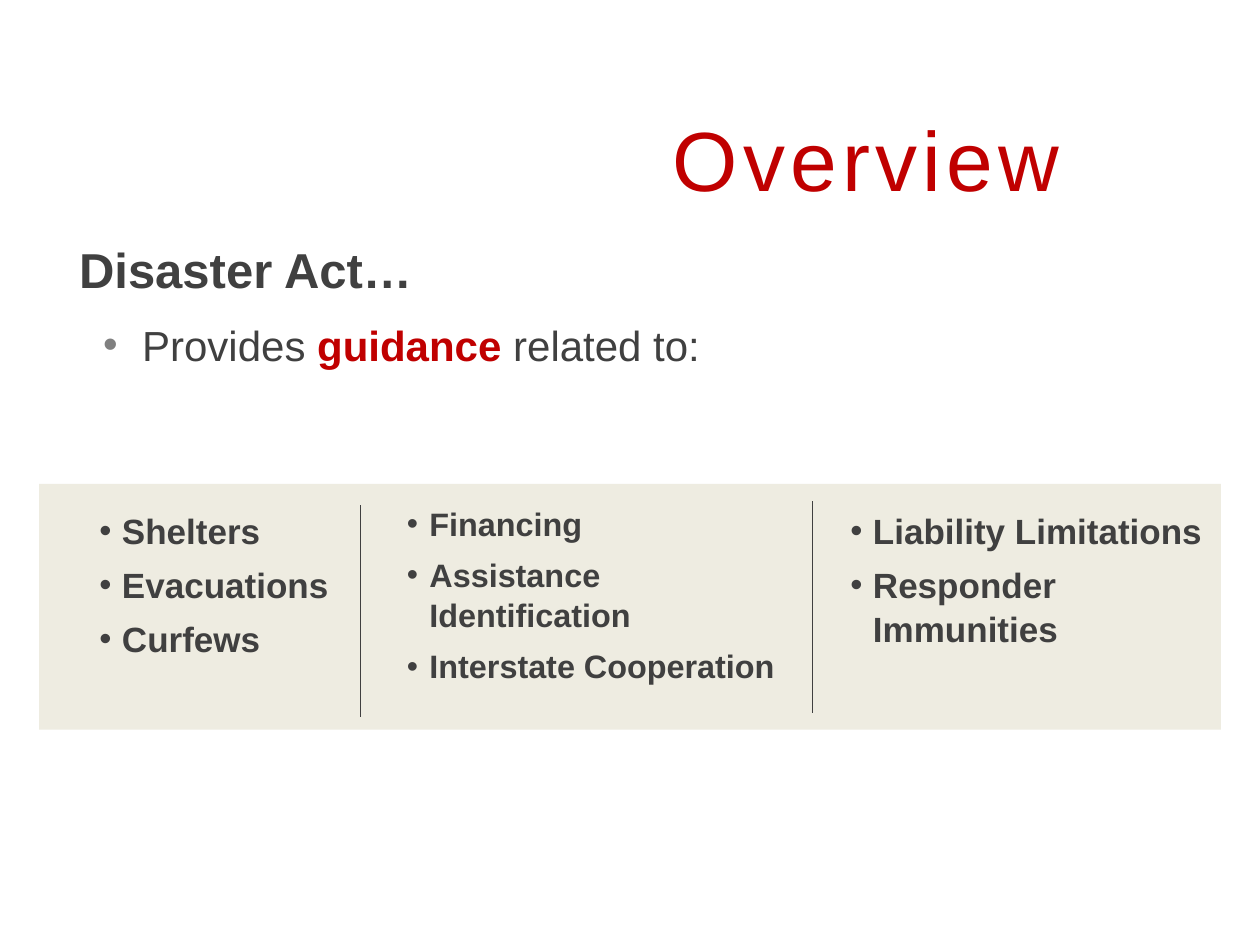
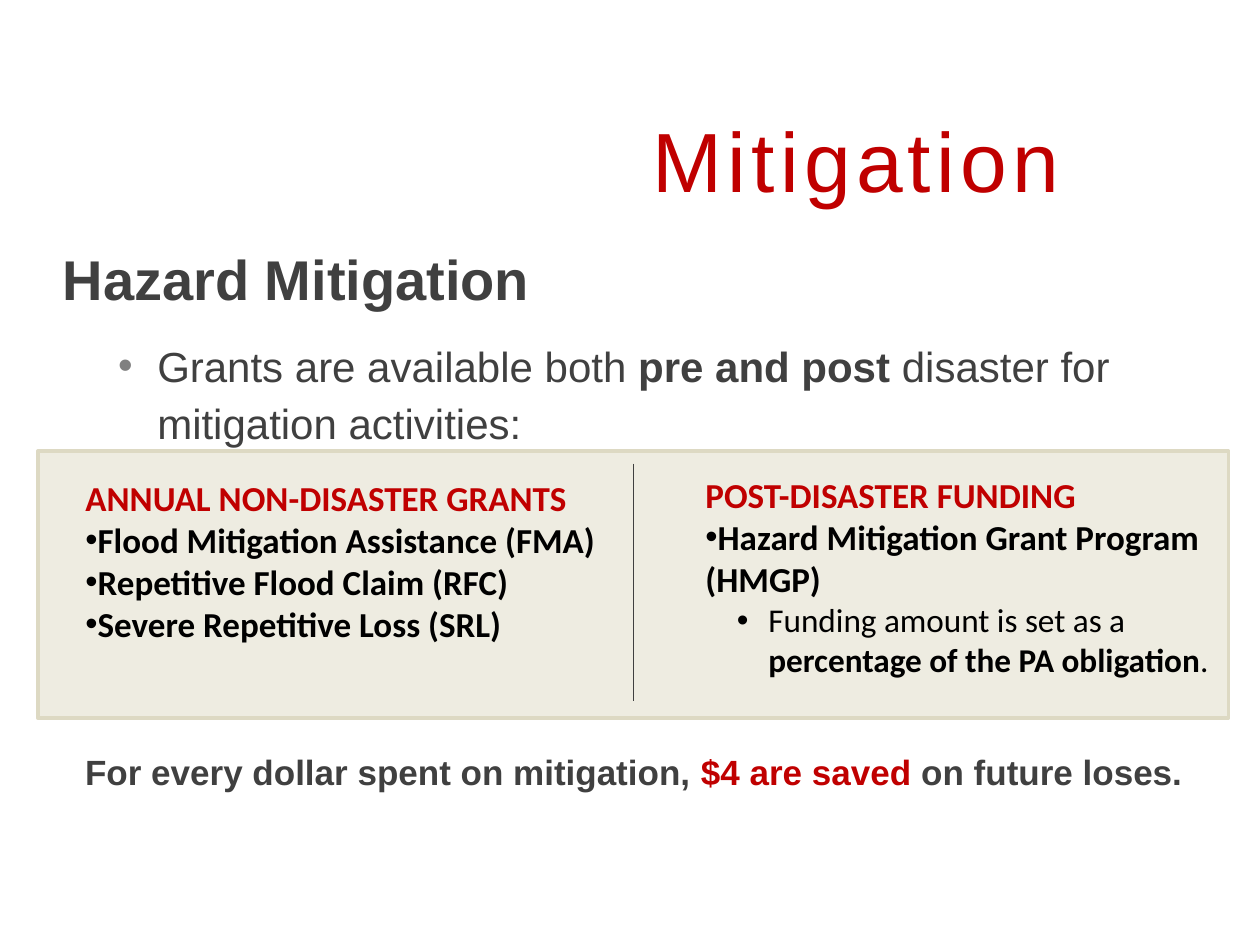
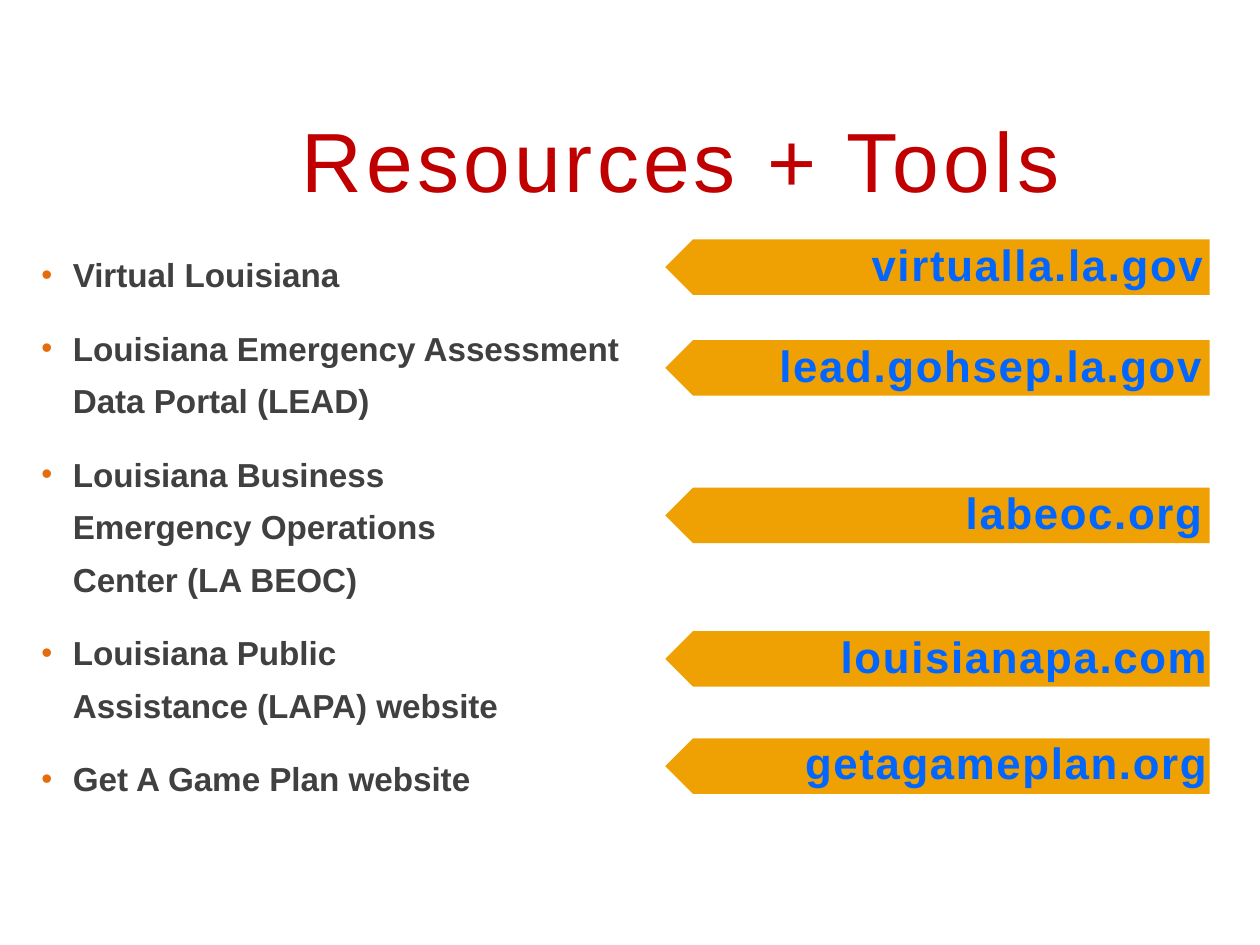
"""Builds three slides on disaster law, mitigation grants and online resources."""
from dataclasses import dataclass
from typing import Optional

from lxml.etree import SubElement
from pptx import Presentation
from pptx.dml.color import RGBColor
from pptx.enum.shapes import MSO_CONNECTOR as Connector, MSO_SHAPE as Shape
from pptx.enum.text import MSO_ANCHOR as Anchor, MSO_AUTO_SIZE as AutoSize, PP_ALIGN as Align
from pptx.oxml.ns import qn
from pptx.util import Inches, Pt

RED = RGBColor(0xC0, 0x00, 0x00)
CHARCOAL = RGBColor(0x40, 0x40, 0x40)
GRAY = RGBColor(0x80, 0x80, 0x80)
BLACK = RGBColor(0x00, 0x00, 0x00)
BEIGE = RGBColor(0xEE, 0xEC, 0xE1)
TAN = RGBColor(0xDD, 0xD9, 0xC3)
ORANGE = RGBColor(0xE4, 0x6C, 0x0A)
AMBER = RGBColor(0xEF, 0xA0, 0x03)
LINK_BLUE = RGBColor(0x00, 0x66, 0xFF)


@dataclass
class Style:
    """Look of a paragraph; lengths in inches, spacing in points or lines."""
    size: float
    color: RGBColor = CHARCOAL
    bold: bool = True
    font: str = "Arial"
    align: Align = Align.LEFT
    left: float = 0
    hang: float = 0
    before: float = 0
    line: Optional[object] = None
    bullet: bool = False
    bullet_color: Optional[RGBColor] = None
    bullet_size: int = 100
    tracking: float = 0
    level: int = 0


TITLE = Style(48, RED, False, align=Align.RIGHT, tracking=3)
TITLE_TIGHT = Style(48, RED, False, align=Align.RIGHT, tracking=2.4)
ACT_HEADING = Style(28, left=0.25, line=Pt(30))
ACT_POINT = Style(24, bold=False, left=0.75, hang=-0.31, before=11, line=Pt(30),
                  bullet=True, bullet_color=GRAY, bullet_size=99, level=1)
HAZARD_HEADING = Style(32, left=0.31, hang=-0.31, line=1.15)
HAZARD_POINT = Style(24, bold=False, left=0.75, hang=-0.31, before=12, line=1.15,
                     bullet=True, bullet_color=GRAY, bullet_size=99, level=1)
TOPIC = Style(20, left=0.19, hang=-0.18, before=6, line=1.04,
              bullet=True, bullet_size=99, level=2)
TOPIC_SMALL = Style(18.5, left=0.19, hang=-0.18, before=6, line=1.04,
                    bullet=True, bullet_size=99, level=2)
GRANT_HEADING = Style(20, RED, font="Calibri")
GRANT = Style(20, BLACK, font="Calibri", bullet=True)
GRANT_DETAIL = Style(19, BLACK, False, "Calibri", left=0.5, hang=-0.25,
                     bullet=True, level=1)
SAVINGS = Style(20, align=Align.CENTER)
RESOURCE = Style(19, left=0.25, hang=-0.25, before=12, line=Pt(30),
                 bullet=True, bullet_color=ORANGE, bullet_size=94)
ADDRESS = Style(25, LINK_BLUE, align=Align.RIGHT, tracking=1)


def add_bullet(paragraph, style):
    """Give a paragraph a round bullet."""
    properties = paragraph._p.get_or_add_pPr()
    if style.bullet_color is not None:
        color = SubElement(properties, qn("a:buClr"))
        SubElement(color, qn("a:srgbClr"), val=str(style.bullet_color))
    SubElement(properties, qn("a:buSzPct"), val=str(style.bullet_size * 1000))
    SubElement(properties, qn("a:buFont"), typeface="Arial")
    SubElement(properties, qn("a:buChar"), char="•")


def add_run(paragraph, text, style, bold=None, color=None):
    """Add one run in the paragraph's style, with its own weight or colour."""
    run = paragraph.add_run()
    run.text = text
    font = run.font
    font.name, font.size = style.font, Pt(style.size)
    font.bold = style.bold if bold is None else bold
    font.color.rgb = color or style.color
    if style.tracking:
        run._r.get_or_add_rPr().set("spc", str(round(style.tracking * 100)))


def write(frame, paragraphs):
    """Fill a frame with (style, runs) pairs; a None run breaks the line."""
    frame.word_wrap = True
    frame.auto_size = AutoSize.NONE
    for index, (style, runs) in enumerate(paragraphs):
        paragraph = frame.add_paragraph() if index else frame.paragraphs[0]
        properties = paragraph._p.get_or_add_pPr()
        properties.set("marL", str(Inches(style.left)))
        properties.set("indent", str(Inches(style.hang)))
        if style.bullet:
            add_bullet(paragraph, style)
        paragraph.level = style.level
        paragraph.alignment = style.align
        paragraph.space_before = Pt(style.before if index else 0)
        if style.line:
            paragraph.line_spacing = style.line
        for run in runs:
            if run is None:
                paragraph.add_line_break()
            elif isinstance(run, str):
                add_run(paragraph, run, style)
            else:
                text, changes = run
                add_run(paragraph, text, style, **changes)


def add_text(slide, box, paragraphs):
    """Place a text box given as left, top, width, height in inches."""
    write(slide.shapes.add_textbox(*map(Inches, box)).text_frame, paragraphs)


def add_filled(slide, kind, box, fill, line=None):
    """Draw a flat preset shape, outlined only if a line colour is given."""
    shape = slide.shapes.add_shape(kind, *map(Inches, box))
    shape.shadow.inherit = False
    shape.fill.solid()
    shape.fill.fore_color.rgb = fill
    if line is None:
        shape.line.fill.background()
    else:
        shape.line.color.rgb = line
        shape.line.width = Pt(2)
    return shape


def add_divider(slide, x, top, bottom):
    """Draw a thin vertical rule."""
    rule = slide.shapes.add_connector(
        Connector.STRAIGHT, *map(Inches, (x, top, x, bottom)))
    rule.line.color.rgb = CHARCOAL
    rule.line.width = Pt(0.75)
    SubElement(rule._element.spPr, qn("a:effectLst"))


def add_titled_slide(deck, text, box, style=TITLE):
    """Add a title-only slide with a right-aligned title."""
    slide = deck.slides.add_slide(deck.slide_layouts[5])
    title = slide.shapes.title
    title.left, title.top, title.width, title.height = map(Inches, box)
    title.text_frame.vertical_anchor = Anchor.MIDDLE
    write(title.text_frame, [(style, [text])])
    return slide


def add_band(slide, box, columns, dividers, line=None):
    """Draw a beige band with text columns and rules placed from its corner."""
    left, top = box[:2]
    add_filled(slide, Shape.RECTANGLE, box, BEIGE, line)
    for (x, y, width, height), paragraphs in columns:
        add_text(slide, (left + x, top + y, width, height), paragraphs)
    for x, start, end in dividers:
        add_divider(slide, left + x, top + start, top + end)


def add_address_tag(slide, box, text_box, address):
    """Draw a left-pointing tag with a web address over it."""
    add_filled(slide, Shape.PENTAGON, box, AMBER).rotation = 180
    add_text(slide, text_box, [(ADDRESS, [address])])


def build_overview(deck):
    """Build the slide on what the act gives guidance for."""
    slide = add_titled_slide(deck, "Overview", (0, 0.83, 8.51, 0.85))
    add_text(slide, (0.28, 1.9, 9.36, 4.15), [
        (ACT_HEADING, ["Disaster Act…"]),
        (ACT_POINT, ["Provides ", ("guidance", {"bold": True, "color": RED}),
                     " related to:"]),
    ])
    topics = [
        ((0.37, 0.14, 2.2, 1.65), TOPIC, ["Shelters", "Evacuations", "Curfews"]),
        ((2.81, 0.1, 3.23, 1.65), TOPIC_SMALL,
         ["Financing", "Assistance Identification", "Interstate Cooperation"]),
        ((6.33, 0.14, 3.23, 1.65), TOPIC,
         ["Liability Limitations", "Responder Immunities"]),
    ]
    columns = [(box, [(style, [name]) for name in names])
               for box, style, names in topics]
    add_band(slide, (0.31, 3.84, 9.38, 1.95), columns,
             [(2.55, 0.17, 1.85), (6.14, 0.14, 1.82)])


def build_mitigation(deck):
    """Build the slide on mitigation grants."""
    slide = add_titled_slide(deck, "Mitigation", (0, 0.84, 8.51, 0.85))
    grants = ["Flood Mitigation Assistance (FMA)", "Repetitive Flood Claim (RFC)",
              "Severe Repetitive Loss (SRL)"]
    annual = [(GRANT_HEADING, ["ANNUAL NON-DISASTER GRANTS"])]
    annual += [(GRANT, [grant]) for grant in grants]
    post_disaster = [
        (GRANT_HEADING, ["POST-DISASTER FUNDING"]),
        (GRANT, ["Hazard Mitigation Grant Program (HMGP)"]),
        (GRANT_DETAIL, ["Funding amount is set as a ",
                        ("percentage of the PA obligation", {"bold": True}), "."]),
    ]
    add_band(slide, (0.3, 3.58, 9.45, 2.12),
             [((0.28, 0.15, 4.44, 1.82), annual),
              ((5.2, 0.13, 4.22, 2.12), post_disaster)],
             [(4.73, 0.1, 1.98)], TAN)
    add_text(slide, (0.4, 1.81, 9.27, 1.8), [
        (HAZARD_HEADING, ["Hazard Mitigation"]),
        (HAZARD_POINT, ["Grants are available both ", ("pre and post ", {"bold": True}),
                        "disaster for mitigation activities:"]),
    ])
    add_text(slide, (0.25, 5.91, 9.56, 0.44), [
        (SAVINGS, ["For every dollar spent on mitigation, ",
                   ("$4 are saved ", {"color": RED}), "on future loses."]),
    ])


def build_resources(deck):
    """Build the slide listing resources beside their web addresses."""
    slide = add_titled_slide(deck, "Resources + Tools", (0.5, 0.84, 8.02, 0.85),
                             TITLE_TIGHT)
    resources = [
        ["Virtual Louisiana"],
        ["Louisiana Emergency Assessment Data Portal (LEAD)"],
        ["Louisiana Business ", None, "Emergency Operations ", None,
         "Center (LA BEOC)"],
        ["Louisiana Public ", None, "Assistance (LAPA) website"],
        ["Get A Game Plan website"],
    ]
    add_text(slide, (0.23, 1.87, 5.23, 4.89), [(RESOURCE, runs) for runs in resources])
    tags = [
        ("virtualla.la.gov", 1.9, (5.69, 1.84, 3.96, 0.57)),
        ("lead.gohsep.la.gov", 2.7, (5.94, 2.64, 3.7, 0.57)),
        ("labeoc.org", 3.87, (6.72, 3.81, 2.92, 0.65)),
        ("louisianapa.com", 5.01, (5.42, 4.95, 4.26, 0.62)),
        ("getagameplan.org", 5.86, (5.47, 5.79, 4.21, 0.7)),
    ]
    for address, top, text_box in tags:
        add_address_tag(slide, (5.28, top, 4.32, 0.44), text_box, address)


def main():
    """Build and save the deck."""
    deck = Presentation()
    deck.slide_width, deck.slide_height = Inches(10), Inches(7.5)
    build_overview(deck)
    build_mitigation(deck)
    build_resources(deck)
    deck.save("out.pptx")


if __name__ == "__main__":
    main()
